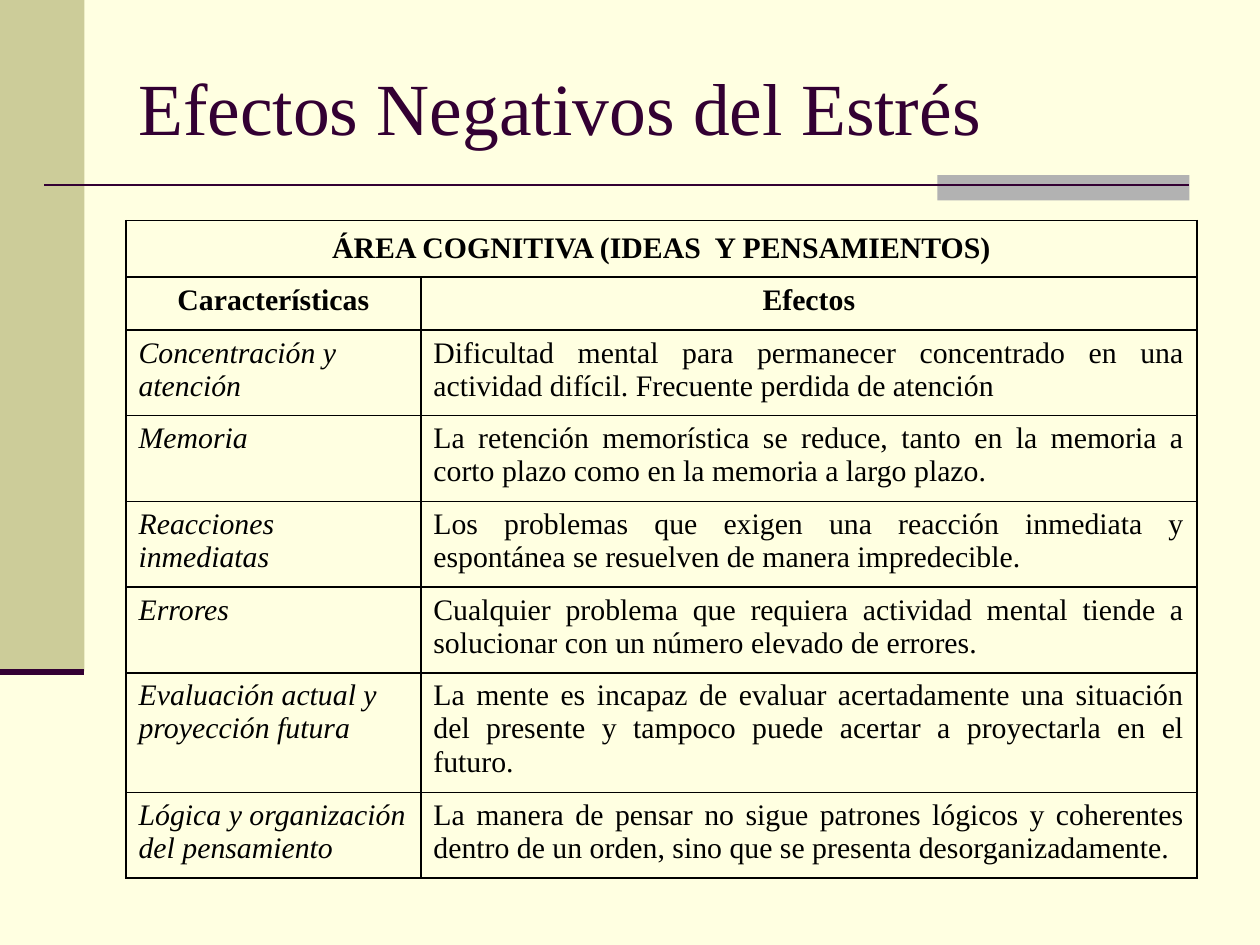
from dataclasses import dataclass

from lxml import etree
from pptx import Presentation
from pptx.dml.color import RGBColor
from pptx.enum.shapes import MSO_CONNECTOR, MSO_SHAPE
from pptx.enum.text import MSO_ANCHOR, PP_ALIGN
from pptx.oxml.ns import qn
from pptx.util import Inches, Pt

STRAIGHT = MSO_CONNECTOR.STRAIGHT
RECTANGLE = MSO_SHAPE.RECTANGLE
MIDDLE, TOP = MSO_ANCHOR.MIDDLE, MSO_ANCHOR.TOP
CENTER, LEFT, JUSTIFY = PP_ALIGN.CENTER, PP_ALIGN.LEFT, PP_ALIGN.JUSTIFY


@dataclass(frozen=True)
class Theme:
    font: str = "Times New Roman"
    background: str = "FFFFE1"
    sidebar: str = "CCCC99"
    accent: str = "B2B2B2"
    plum: str = "330033"
    ink: str = "000000"
    title_size: float = 42
    table_size: float = 17
    border: float = 1


THEME = Theme()

TITLE = "Efectos Negativos del Estrés"
AREA = "ÁREA COGNITIVA (IDEAS  Y PENSAMIENTOS)"
HEADINGS = ("Características", "Efectos")
EFFECTS = [
    ("Concentración y atención",
     "Dificultad mental para permanecer concentrado en una actividad difícil. "
     "Frecuente perdida de atención"),
    ("Memoria",
     "La retención memorística se reduce, tanto en la memoria a corto plazo "
     "como en la memoria a largo plazo."),
    ("Reacciones inmediatas",
     "Los problemas que exigen una reacción inmediata y espontánea se "
     "resuelven de manera impredecible."),
    ("Errores",
     "Cualquier problema que requiera actividad mental tiende a solucionar "
     "con un número elevado de errores."),
    ("Evaluación actual y proyección futura",
     "La mente es incapaz de evaluar acertadamente una situación del presente "
     "y tampoco puede acertar a proyectarla en el futuro."),
    ("Lógica y organización del pensamiento",
     "La manera de pensar no sigue patrones lógicos y coherentes dentro de un "
     "orden, sino que se presenta desorganizadamente."),
]

BLOCKS = [
    ((0, 0, 0.67, 5.33), THEME.sidebar),
    ((7.44, 1.39, 2, 0.2), THEME.accent),
]
RULES = [
    ((0.35, 1.47, 9.44, 1.47), 1.5),
    ((0, 5.33, 0.67, 5.33), 3.5),
]
TITLE_BOX = (1, 0.3, 8.5, 1.08)
TABLE_LEFT, TABLE_TOP = 1, 1.75
COLUMN_WIDTHS = (2.34, 6.16)
ROW_HEIGHTS = [0.45, 0.42] + [0.68] * len(EFFECTS)


def rgb(color):
    return RGBColor.from_string(color)


def write(frame, text, size, color, align=LEFT, bold=False, italic=False):
    paragraph = frame.paragraphs[0]
    paragraph.alignment = align
    run = paragraph.add_run()
    run.text = text
    font = run.font
    font.name, font.size = THEME.font, Pt(size)
    font.bold, font.italic = bold, italic
    font.color.rgb = rgb(color)


def add_block(slide, box, color):
    block = slide.shapes.add_shape(RECTANGLE, *map(Inches, box))
    block.shadow.inherit = False
    block.fill.solid()
    block.fill.fore_color.rgb = rgb(color)
    block.line.fill.background()


def add_rule(slide, ends, width):
    rule = slide.shapes.add_connector(STRAIGHT, *map(Inches, ends))
    rule.line.color.rgb = rgb(THEME.plum)
    rule.line.width = Pt(width)
    etree.SubElement(rule.element.spPr, qn("a:effectLst"))


def add_title(slide):
    title = slide.shapes.add_textbox(*map(Inches, TITLE_BOX)).text_frame
    title.word_wrap = True
    title.vertical_anchor = MIDDLE
    write(title, TITLE, THEME.title_size, THEME.plum)


def style_cell(cell, anchor=TOP):
    cell.vertical_anchor = anchor
    properties = cell._tc.get_or_add_tcPr()
    for side in ("a:lnL", "a:lnR", "a:lnT", "a:lnB"):
        border = etree.SubElement(properties, qn(side), w=str(Pt(THEME.border)))
        fill = etree.SubElement(border, qn("a:solidFill"))
        etree.SubElement(fill, qn("a:srgbClr"), val=THEME.ink)
    cell.fill.background()


def add_effects_table(slide):
    frame = slide.shapes.add_table(
        len(ROW_HEIGHTS), len(COLUMN_WIDTHS), Inches(TABLE_LEFT), Inches(TABLE_TOP),
        Inches(sum(COLUMN_WIDTHS)), Inches(sum(ROW_HEIGHTS)))
    table = frame.table
    table.first_row = table.horz_banding = False
    for column, width in zip(table.columns, COLUMN_WIDTHS):
        column.width = Inches(width)
    for row, height in zip(table.rows, ROW_HEIGHTS):
        row.height = Inches(height)
    table.cell(0, 0).merge(table.cell(0, 1))

    for r, texts in enumerate([(AREA, ""), HEADINGS, *EFFECTS]):
        for c, text in enumerate(texts):
            cell = table.cell(r, c)
            style_cell(cell, MIDDLE if r == 0 else TOP)
            if text:
                heading = r < 2
                align = CENTER if heading else (LEFT, JUSTIFY)[c]
                write(cell.text_frame, text, THEME.table_size, THEME.ink, align,
                      bold=heading, italic=not heading and c == 0)


def main():
    deck = Presentation()
    deck.slide_width, deck.slide_height = Inches(10), Inches(7.5)
    slide = deck.slides.add_slide(deck.slide_layouts[6])
    slide.background.fill.solid()
    slide.background.fill.fore_color.rgb = rgb(THEME.background)
    for box, color in BLOCKS:
        add_block(slide, box, color)
    for ends, width in RULES:
        add_rule(slide, ends, width)
    add_title(slide)
    add_effects_table(slide)
    deck.save("out.pptx")


if __name__ == "__main__":
    main()
